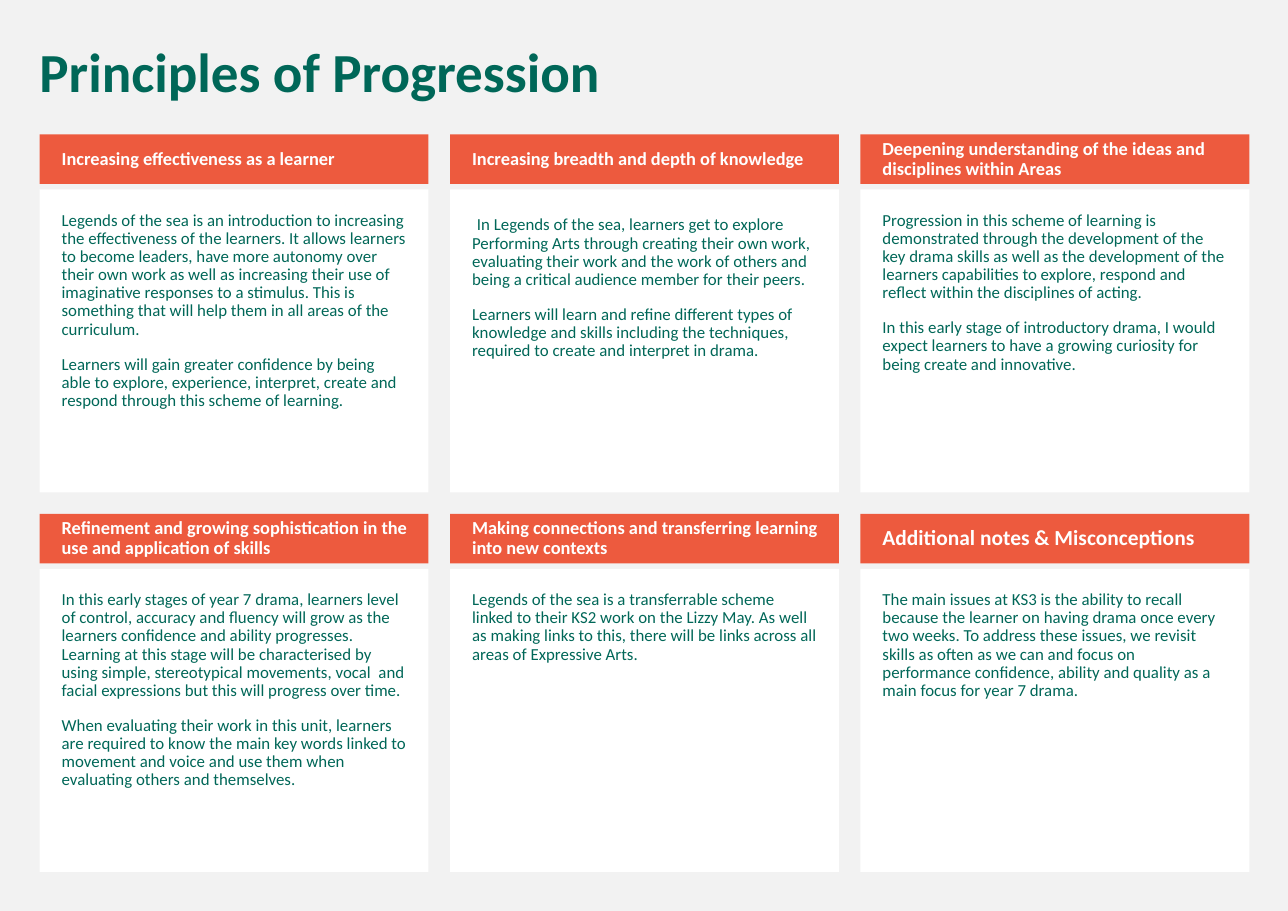
from pptx import Presentation
from pptx.dml.color import RGBColor as RGB
from pptx.enum.shapes import MSO_SHAPE as Shape
from pptx.enum.text import MSO_ANCHOR as Anchor, PP_ALIGN as Align
from pptx.util import Inches as In, Pt

GREEN = RGB(0x00, 0x67, 0x58)
CORAL = RGB(0xED, 0x5A, 0x3E)
WHITE = RGB(0xFF, 0xFF, 0xFF)
GREY = RGB(0xF2, 0xF2, 0xF2)

WIDE, HIGH = 11.69, 8.27
LEFT, TOP = 0.36, 1.22
COLS = 3
CARD_W, CARD_H = 3.53, 3.25
STEP_X, STEP_Y = 3.725, 3.445
HEAD_H, GAP = 0.45, 0.05

CARDS = [
    ("Increasing effectiveness as a learner", [
        "Legends of the sea is an introduction to increasing the effectiveness of the learners. "
        "It allows learners to become leaders, have more autonomy over their own work as well as "
        "increasing their use of imaginative responses to a stimulus. This is something that will "
        "help them in all areas of the curriculum.",
        "Learners will gain greater confidence by being able to explore, experience, interpret, "
        "create and respond through this scheme of learning."], {}),
    ("Increasing breadth and depth of knowledge", [
        " In Legends of the sea, learners get to explore Performing Arts through creating their "
        "own work, evaluating their work and the work of others and being a critical audience "
        "member for their peers.",
        "Learners will learn and refine different types of knowledge and skills including the "
        "techniques, required to create and interpret in drama."], {"lead": 14}),
    ("Deepening understanding of the ideas and disciplines within Areas", [
        "Progression in this scheme of learning is demonstrated through the development of the "
        "key drama skills as well as the development of the learners capabilities to explore, "
        "respond and reflect within the disciplines of acting.",
        "In this early stage of introductory drama, I would expect learners to have a growing "
        "curiosity for being create and innovative."], {}),
    ("Refinement and growing sophistication in the use and application of skills", [
        "In this early stages of year 7 drama, learners level of control, accuracy and fluency "
        "will grow as the learners confidence and ability progresses. Learning at this stage will "
        "be characterised by using simple, stereotypical movements, vocal  and facial expressions "
        "but this will progress over time.",
        "When evaluating their work in this unit, learners are required to know the main key words "
        "linked to movement and voice and use them when evaluating others and themselves."], {}),
    ("Making connections and transferring learning into new contexts", [
        "Legends of the sea is a transferrable scheme linked to their KS2 work on the Lizzy May. "
        "As well as making links to this, there will be links across all areas of Expressive "
        "Arts."], {}),
    ("Additional notes & Misconceptions", [
        "The main issues at KS3 is the ability to recall because the learner on having drama once "
        "every two weeks. To address these issues, we revisit skills as often as we can and focus "
        "on performance confidence, ability and quality as a main focus for year 7 drama."],
        {"head": 14}),
]


def write(shape, paras, size=11, color=GREEN, bold=False, lead=None,
          anchor=Anchor.TOP, pads=(0.2, 0.2, 0.2, 0.2)):
    frame = shape.text_frame
    frame.word_wrap = True
    frame.vertical_anchor = anchor
    (frame.margin_left, frame.margin_top,
     frame.margin_right, frame.margin_bottom) = map(In, pads)
    for i, text in enumerate(paras):
        para = frame.add_paragraph() if i else frame.paragraphs[0]
        para.alignment = Align.LEFT
        para.line_spacing = 0.9
        para.space_before = Pt(11)
        parts = [(text, size)]
        if lead and i == 0:
            parts = [(text[:1], lead), (text[1:], size)]
        for words, points in parts:
            run = para.add_run()
            run.text = words
            font = run.font
            font.name, font.size, font.bold = "Calibri", Pt(points), bold
            font.color.rgb = color


def panel(slide, box, fill):
    shape = slide.shapes.add_shape(Shape.RECTANGLE, *map(In, box))
    shape.shadow.inherit = False
    shape.fill.solid()
    shape.fill.fore_color.rgb = fill
    shape.line.fill.background()
    return shape


def card(slide, box, title, paras, head=12, lead=None):
    x, y, w, h = box
    drop = HEAD_H + GAP
    body = panel(slide, (x, y + drop, w, h - drop), WHITE)
    write(body, paras, lead=lead)
    bar = panel(slide, (x, y, w, HEAD_H), CORAL)
    write(bar, [title], size=head, color=WHITE, bold=True,
          anchor=Anchor.MIDDLE, pads=(0.2, 0.05, 0.1, 0.05))


def banner(slide, box, title):
    shape = slide.shapes.add_textbox(*map(In, box))
    write(shape, [title], size=36, bold=True, pads=(0.1, 0.05, 0.1, 0.05))


def main():
    deck = Presentation()
    deck.slide_width, deck.slide_height = In(WIDE), In(HIGH)
    slide = deck.slides.add_slide(deck.slide_layouts[6])
    slide.background.fill.solid()
    slide.background.fill.fore_color.rgb = GREY
    banner(slide, (LEFT - 0.1, 0.36, 11.08, 0.65), "Principles of Progression")
    for i, (title, paras, sizes) in enumerate(CARDS):
        row, col = divmod(i, COLS)
        box = (LEFT + col * STEP_X, TOP + row * STEP_Y, CARD_W, CARD_H)
        card(slide, box, title, paras, **sizes)
    deck.save("out.pptx")


if __name__ == "__main__":
    main()
